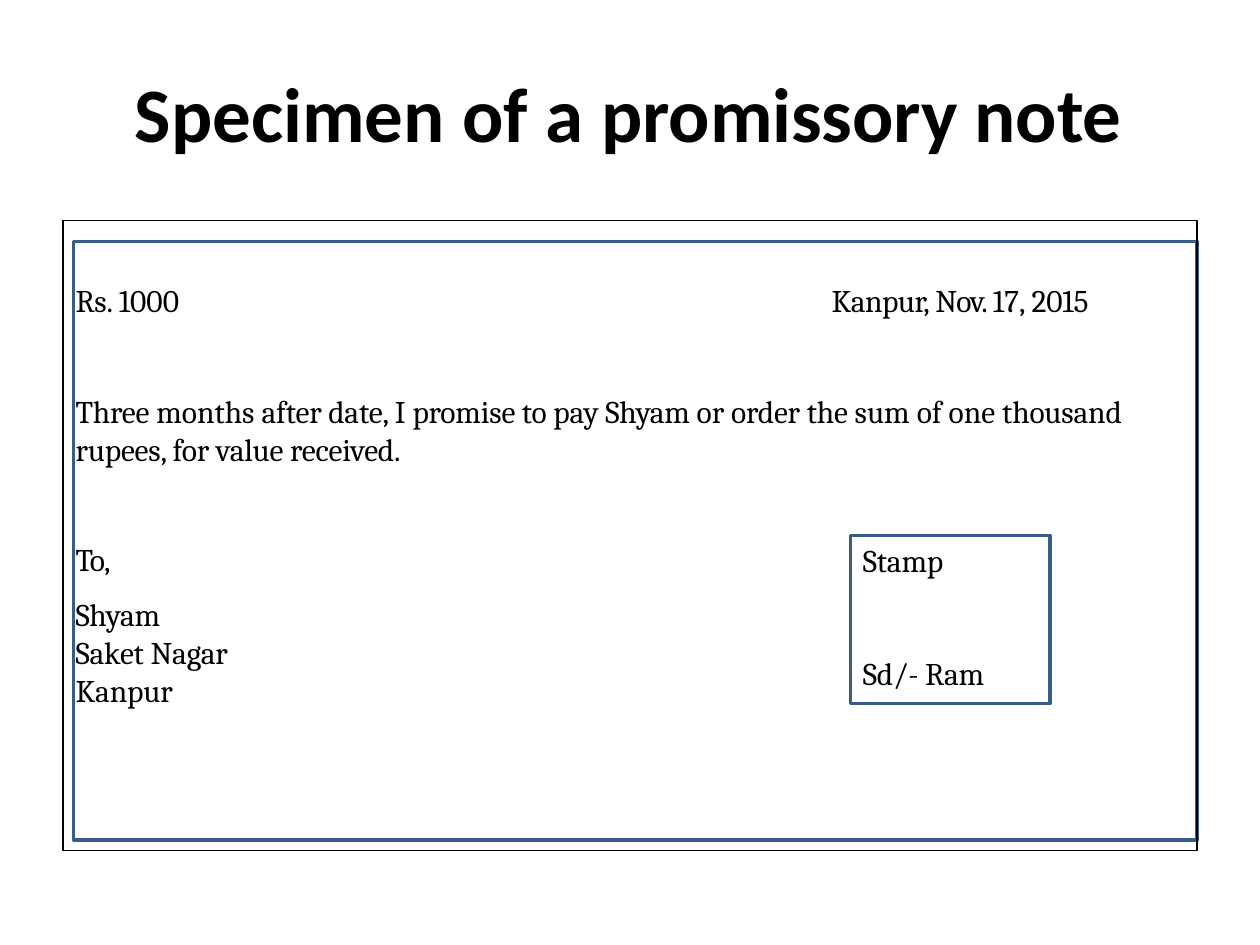
"""Build a slide that shows a specimen of a promissory note."""
import pptx
import pptx.dml.color
import pptx.enum.shapes
import pptx.enum.text
import pptx.util

HUES = {"ink": "000000", "blue": "385D89", "paper": "FFFFFF"}
COLS, ROWS = 120, 90

FRAMES = [
    {"at": (7, 23, 107, 57), "line": "blue", "width": 2.04},
    {"at": (6, 21, 108, 60), "line": "ink", "width": 0.72},
]
STAMP = {"at": (81, 51, 19, 16), "line": "blue", "width": 2.04, "fill": "paper"}

TITLE = [{"runs": [("Specimen of a ", 0), ("promissory note", -10)], "before": 1.1}]
SUM = [{"runs": [("Rs. ", -10), ("1000", 0)], "before": 1}]
DATE = [{"runs": [("Kanpur, ", -30), ("Nov. ", -50), ("17, ", 0), ("2015", -10)],
         "before": 1}]
PLEDGE = [{"runs": [
    ("Three ", -10), ("months ", 0), ("after date, ", -10), ("I ", 0),
    ("promise to pay ", -10), ("Shyam ", -20), ("or ", 0), ("order the ", -10),
    ("sum of one ", 0), ("thousand rupees, for value received.", -10)],
    "before": 1}]
PAYEE = [
    {"runs": [("To,", -50)], "before": 1, "lines": 1.46},
    {"runs": [("Shyam", -20)], "lines": 1.46},
    {"runs": [("Saket Nagar", -10)]},
    {"runs": [("Kanpur", -10)]},
]
SIGN = [
    {"runs": [("Stamp", -10)], "before": 3.1},
    {"runs": [("Sd/- Ram", -10)], "before": 43},
]

HEAD = {"name": "Calibri", "size": 44, "bold": True}
BODY = {"name": "Cambria", "size": 18, "bold": False}
TEXTS = [
    ((12.72, 6.12, 94.56, 9.12), TITLE, HEAD),
    ((7.08, 26.64, 11.4, 4), SUM, BODY),
    ((79.08, 26.64, 28.3, 4), DATE, BODY),
    ((7.08, 37.2, 105.84, 7.56), PLEDGE, BODY),
    ((7.08, 49.68, 15.6, 18), PAYEE, BODY),
]

deck = pptx.Presentation()
deck.slide_width = pptx.util.Inches(10)
deck.slide_height = pptx.util.Inches(7.5)
slide = deck.slides.add_slide(deck.slide_layouts[6])


def hue(key):
    return pptx.dml.color.RGBColor.from_string(HUES[key])


def place(at):
    col, row = deck.slide_width / COLS, deck.slide_height / ROWS
    return [round(n * step) for n, step in zip(at, (col, row, col, row))]


def box(part):
    kind = pptx.enum.shapes.MSO_SHAPE.RECTANGLE
    shape = slide.shapes.add_shape(kind, *place(part["at"]))
    shape.shadow.inherit = False
    if "fill" in part:
        shape.fill.solid()
        shape.fill.fore_color.rgb = hue(part["fill"])
    else:
        shape.fill.background()
    shape.line.color.rgb = hue(part["line"])
    shape.line.width = pptx.util.Pt(part["width"])
    return shape


def write(shape, paras, style, left=0.01, top=0.01):
    frame = shape.text_frame
    frame.word_wrap = True
    frame.vertical_anchor = pptx.enum.text.MSO_ANCHOR.TOP
    frame.margin_left = pptx.util.Inches(left)
    frame.margin_top = pptx.util.Inches(top)
    frame.margin_right = frame.margin_bottom = 0
    for n, item in enumerate(paras):
        para = frame.add_paragraph() if n else frame.paragraphs[0]
        para.alignment = pptx.enum.text.PP_ALIGN.LEFT
        para.space_before = pptx.util.Pt(item.get("before", 0))
        para.line_spacing = item.get("lines", 1.0)
        for text, gap in item["runs"]:
            run = para.add_run()
            run.text = text
            run.font.name = style["name"]
            run.font.size = pptx.util.Pt(style["size"])
            run.font.bold = style["bold"]
            run.font.color.rgb = hue("ink")
            run._r.get_or_add_rPr().set("spc", str(gap))


for part in FRAMES:
    box(part)
for at, paras, style in TEXTS:
    write(slide.shapes.add_textbox(*place(at)), paras, style)
write(box(STAMP), SIGN, BODY, left=0.1, top=0.04)

deck.save("out.pptx")
